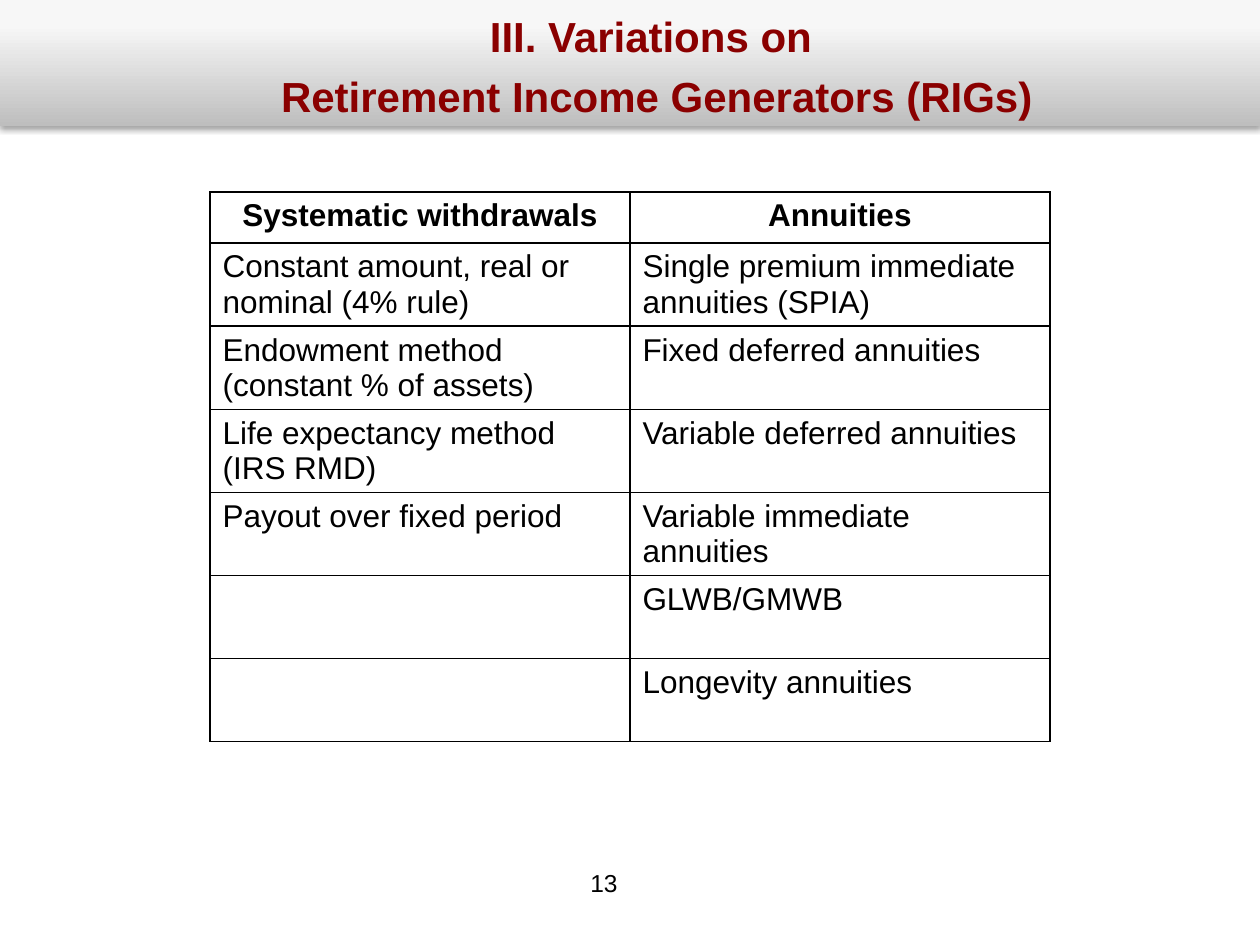
from lxml import etree
from pptx import Presentation, util as u
from pptx.dml.color import RGBColor
from pptx.enum import shapes, text
from pptx.oxml import parse_xml
from pptx.oxml.ns import nsdecls

SCALE = 914400 / 126


def px(*lengths):
    return [u.Emu(round(length * SCALE)) for length in lengths]


def style(paragraph, size, color, bold=False):
    paragraph.font.name = "Arial"
    paragraph.font.size = u.Pt(size)
    paragraph.font.bold = bold
    paragraph.font.color.rgb = RGBColor.from_string(color)


presentation = Presentation()
presentation.slide_width, presentation.slide_height = px(1260, 945)
slide = presentation.slides.add_slide(presentation.slide_layouts[5])

banner = slide.shapes.add_shape(shapes.MSO_SHAPE.RECTANGLE, *px(0, 0, 1260, 126))
banner.line.fill.background()
banner.fill.gradient()
gradient = banner._element.spPr.find("{*}gradFill")
stops = "".join(
    f'<a:gs pos="{position * 1000}"><a:srgbClr val="{color}"/></a:gs>'
    for position, color in [(0, "BEBEBE"), (80, "F7F7F7"), (100, "F8F8F8")]
)
gradient.getparent().replace(gradient, parse_xml(
    f'<a:gradFill {nsdecls("a")} rotWithShape="1"><a:gsLst>{stops}</a:gsLst>'
    '<a:lin ang="16200000" scaled="0"/></a:gradFill>'
))
banner._element.spPr.append(parse_xml(
    f'<a:effectLst {nsdecls("a")}><a:outerShdw blurRad="{u.Pt(3.1)}" dist="{u.Pt(1.8)}"'
    ' dir="5400000" rotWithShape="0"><a:srgbClr val="000000"><a:alpha val="35000"/>'
    '</a:srgbClr></a:outerShdw></a:effectLst>'
))
slide.shapes._spTree.insert(2, banner._element)

title = slide.shapes.title
title.left, title.top, title.width, title.height = px(95, 10, 1112, 73)
frame = title.text_frame
frame.text = "III. Variations on\n Retirement Income Generators (RIGs)"
frame.word_wrap = True
frame.auto_size = text.MSO_AUTO_SIZE.NONE
frame.vertical_anchor = text.MSO_ANCHOR.TOP
frame.margin_top = frame.margin_bottom = 0
for paragraph in frame.paragraphs:
    style(paragraph, 24, "8A0000", True)
    paragraph.alignment = text.PP_ALIGN.CENTER
    paragraph.space_before = u.Pt(5.5)

rows = [
    ("Systematic withdrawals", "Annuities"),
    ("Constant amount, real or nominal (4% rule)", "Single premium immediate annuities (SPIA)"),
    ("Endowment method (constant % of assets)", "Fixed deferred annuities"),
    ("Life expectancy method (IRS RMD)", "Variable deferred annuities"),
    ("Payout over fixed period", "Variable immediate annuities"),
    ("", "GLWB/GMWB"),
    ("", "Longevity annuities"),
]
table = slide.shapes.add_table(len(rows), 2, *px(210, 192, 840, 549)).table
table.horz_banding = False
for row_index, row in enumerate(rows):
    header = row_index == 0
    table.rows[row_index].height = px(51 if header else 83)[0]
    for column_index, wording in enumerate(row):
        cell = table.cell(row_index, column_index)
        cell.text = wording
        cell.fill.background()
        paragraph = cell.text_frame.paragraphs[0]
        style(paragraph, 18, "000000", header)
        paragraph.alignment = text.PP_ALIGN.CENTER if header else text.PP_ALIGN.LEFT
        properties = cell._tc.get_or_add_tcPr()
        for position, side in enumerate(["lnL", "lnR", "lnT", "lnB"]):
            properties.insert(position, parse_xml(
                f'<a:{side} {nsdecls("a")} w="{u.Pt(1)}"><a:solidFill>'
                f'<a:srgbClr val="000000"/></a:solidFill></a:{side}>'
            ))

number = slide.shapes.add_textbox(*px(577, 862, 53, 65))
number.text_frame.word_wrap = True
number.text_frame.text = "13"
paragraph = number.text_frame.paragraphs[0]
style(paragraph, 14, "000000")
paragraph.alignment = text.PP_ALIGN.RIGHT

presentation.save("out.pptx")
